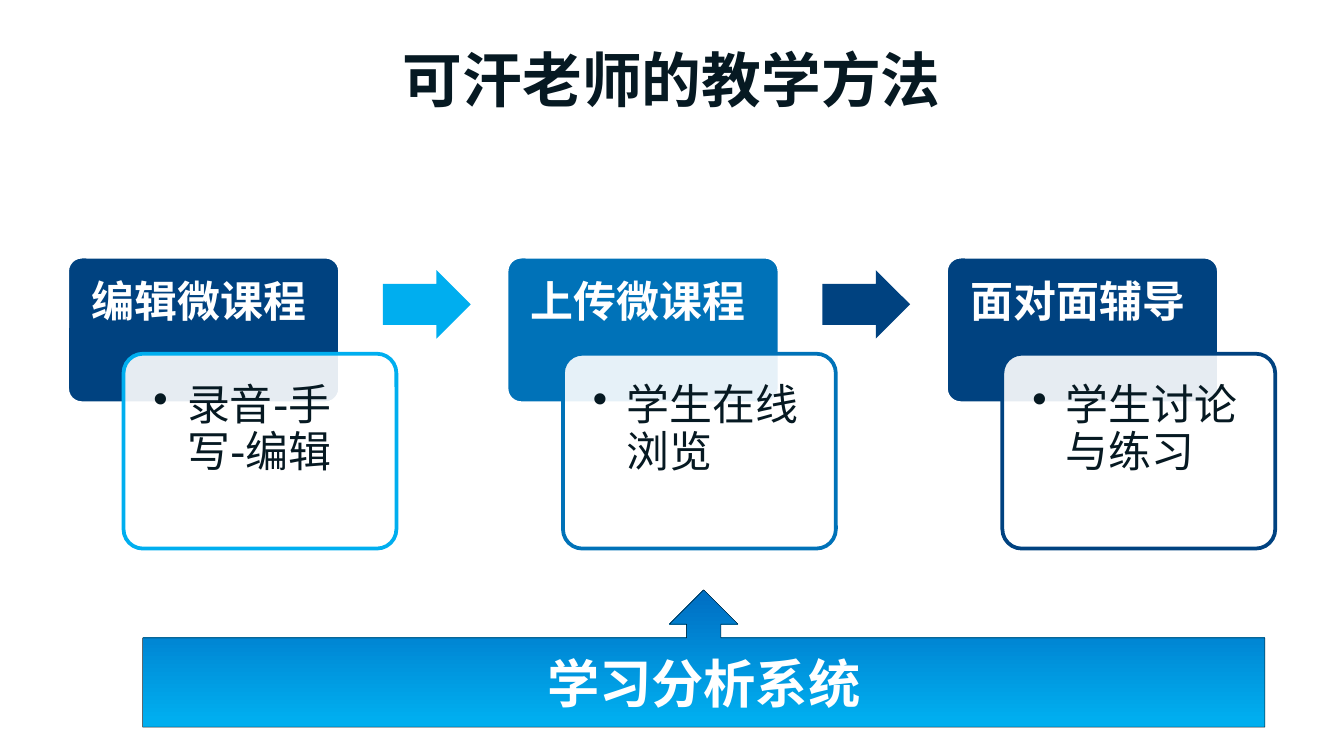
from lxml.etree import SubElement
from pptx import Presentation
from pptx.dml.color import RGBColor
from pptx.enum.shapes import MSO_SHAPE as Shape
from pptx.enum.text import MSO_ANCHOR as Anchor, PP_ALIGN as Align
from pptx.oxml.ns import qn
from pptx.util import Pt

NAVY = RGBColor(0x00, 0x42, 0x80)
BLUE = RGBColor(0x00, 0x72, 0xB8)
CYAN = RGBColor(0x00, 0xAE, 0xEF)
DEEP_BLUE = RGBColor(0x00, 0x71, 0xC5)
INK = RGBColor(0x06, 0x19, 0x22)
WHITE = RGBColor(0xFF, 0xFF, 0xFF)

TITLE_FONT = "Noto Sans CJK JP"
STEP_FONT = "DejaVu Sans"
BASE_FONT = "Noto Sans CJK SC"

TITLE = "可汗老师的教学方法"
# heading, detail, heading fill, detail outline, fill of the arrow to the next step
STEPS = [
    ("编辑微课程", "录音-手写-编辑", NAVY, CYAN, CYAN),
    ("上传微课程", "学生在线浏览", BLUE, BLUE, NAVY),
    ("面对面辅导", "学生讨论与练习", NAVY, NAVY, None),
]
FOUNDATION = "学习分析系统"

STEP_LEFT, STEP_TOP, STEP_PITCH = 36, 137.5, 235.4
BOX_WIDTH, HEADING_HEIGHT, DETAIL_HEIGHT = 146.2, 78.5, 104.4
DETAIL_DX, DETAIL_DY = 30.2, 52
ARROW_DX, ARROW_DY, ARROW_WIDTH, ARROW_HEIGHT = 169.2, 7.2, 47, 36.7


def add_shape(slide, kind, left, top, width, height, fill=None, line=None, line_width=2):
    shape = slide.shapes.add_shape(kind, Pt(left), Pt(top), Pt(width), Pt(height))
    shape.shadow.inherit = False
    if fill is not None:
        shape.fill.solid()
        shape.fill.fore_color.rgb = fill
    if line is None:
        shape.line.fill.background()
    else:
        shape.line.color.rgb = line
        shape.line.width = Pt(line_width)
    return shape


def write(shape, text, size, font, color, bold, align, anchor, inset, spacing=None):
    """Fill the shape with one paragraph and return that paragraph."""
    frame = shape.text_frame
    frame.word_wrap = True
    frame.vertical_anchor = anchor
    frame.margin_left = frame.margin_right = Pt(inset)
    frame.margin_top = frame.margin_bottom = Pt(inset)
    paragraph = frame.paragraphs[0]
    paragraph.alignment = align
    paragraph.line_spacing = spacing
    run = paragraph.add_run()
    run.text = text
    run.font.size = Pt(size)
    run.font.name = font
    run.font.bold = bold
    run.font.color.rgb = color
    SubElement(run.font._element, qn("a:ea"), typeface=font)
    return paragraph


def add_bullet(paragraph, indent):
    properties = paragraph._p.get_or_add_pPr()
    properties.set("marL", str(Pt(indent)))
    properties.set("indent", str(-Pt(indent)))
    SubElement(properties, qn("a:buChar"), char="•")


def set_opacity(shape, percent):
    color = shape._element.spPr.find(qn("a:solidFill"))[0]
    SubElement(color, qn("a:alpha"), val=str(percent * 1000))


def add_step(slide, left, heading, detail, fill, outline, arrow_fill):
    heading_box = add_shape(slide, Shape.ROUNDED_RECTANGLE, left, STEP_TOP,
                            BOX_WIDTH, HEADING_HEIGHT, fill, WHITE)
    heading_box.adjustments[0] = 0.1
    write(heading_box, heading, 23, STEP_FONT, WHITE, True,
          Align.LEFT, Anchor.TOP, 10.7, 0.9)

    detail_box = add_shape(slide, Shape.ROUNDED_RECTANGLE, left + DETAIL_DX,
                           STEP_TOP + DETAIL_DY, BOX_WIDTH, DETAIL_HEIGHT, WHITE, outline)
    detail_box.adjustments[0] = 0.1
    set_opacity(detail_box, 90)
    paragraph = write(detail_box, detail, 23, STEP_FONT, INK, False,
                      Align.LEFT, Anchor.TOP, 13, 0.9)
    add_bullet(paragraph, 18)

    if arrow_fill is not None:
        arrow = add_shape(slide, Shape.RIGHT_ARROW, left + ARROW_DX, STEP_TOP + ARROW_DY,
                          ARROW_WIDTH, ARROW_HEIGHT, arrow_fill)
        arrow.adjustments[0] = 0.6


def add_foundation(slide):
    callout = add_shape(slide, Shape.UP_ARROW_CALLOUT, 76.4, 316, 601.2, 73.5,
                        line=INK, line_width=0.25)
    callout.fill.gradient()
    callout.fill.gradient_angle = 90
    stops = [(0.05, CYAN), (0.95, DEEP_BLUE)]
    for stop, (position, color) in zip(callout.fill.gradient_stops, stops):
        stop.position = position
        stop.color.rgb = color
    write(callout, FOUNDATION, 28, BASE_FONT, WHITE, True, Align.CENTER, Anchor.MIDDLE, 3.6)
    callout.text_frame.word_wrap = False


def main():
    presentation = Presentation()
    presentation.slide_width, presentation.slide_height = Pt(720), Pt(405)
    slide = presentation.slides.add_slide(presentation.slide_layouts[5])

    title = slide.shapes.title
    title.left, title.top, title.width, title.height = Pt(36), Pt(35.3), Pt(648), Pt(36.7)
    write(title, TITLE, 32, TITLE_FONT, INK, True, Align.CENTER, Anchor.TOP, 0, Pt(26))

    for index, step in enumerate(STEPS):
        add_step(slide, STEP_LEFT + index * STEP_PITCH, *step)
    add_foundation(slide)
    presentation.save("out.pptx")


if __name__ == "__main__":
    main()
